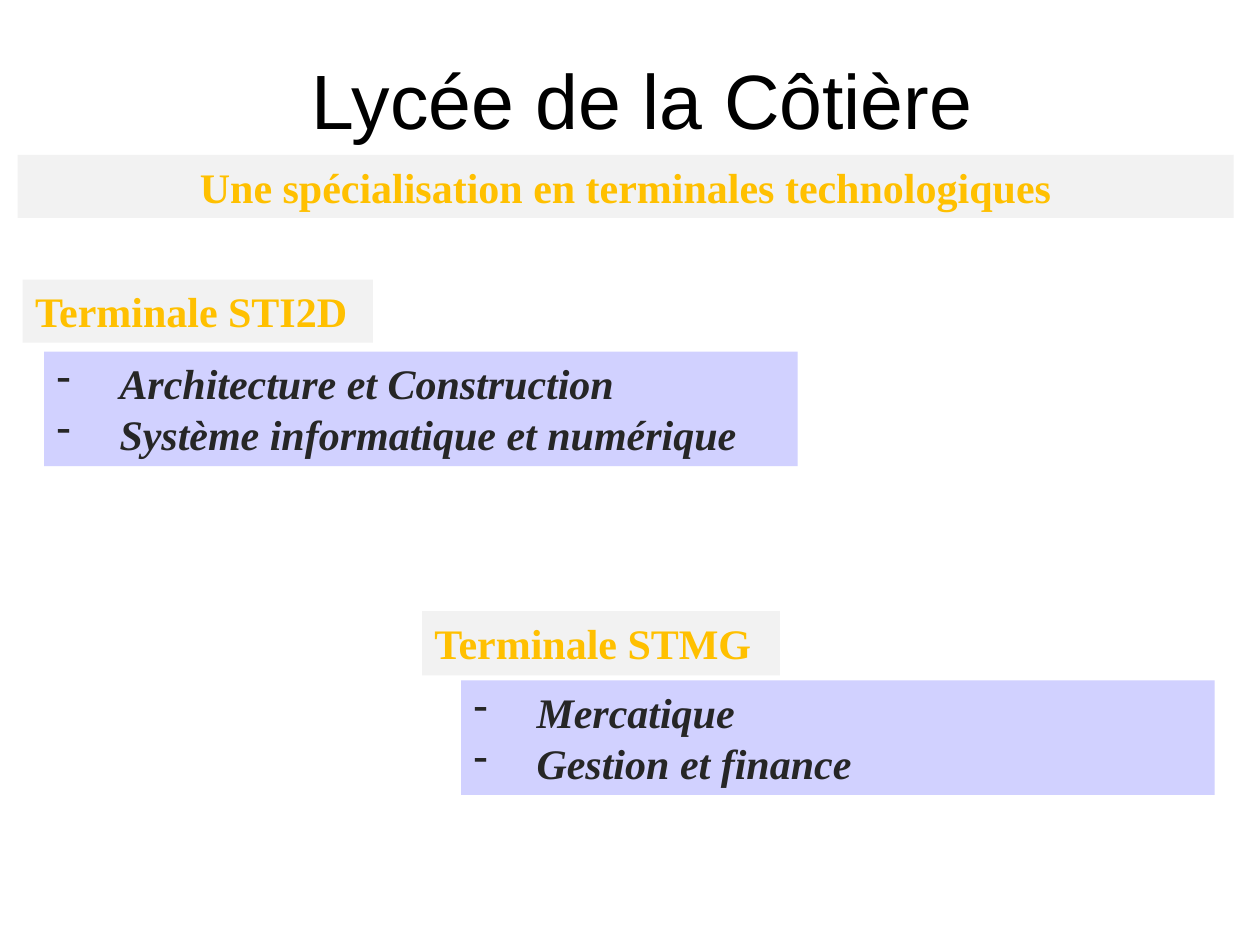
"""Build the slide on technological specialisations at the Lycée de la Côtière."""
from lxml.etree import SubElement
from pptx import Presentation
from pptx.dml.color import RGBColor
from pptx.enum.shapes import MSO_SHAPE as SHAPE
from pptx.enum.text import MSO_ANCHOR as ANCHOR, MSO_AUTO_SIZE as AUTO, PP_ALIGN as ALIGN
from pptx.oxml.ns import qn
from pptx.util import Inches, Pt

TITLE = "Lycée de la Côtière"
SUBTITLE = "Une spécialisation en terminales technologiques"
TRACKS = [
    {"name": "Terminale STI2D", "label": (0.18, 2.22, 2.78, 0.5), "list": (0.35, 2.79),
     "options": ["Architecture et Construction", "Système informatique et numérique"]},
    {"name": "Terminale STMG", "label": (3.35, 4.85, 2.84, 0.51), "list": (3.66, 5.4),
     "options": ["Mercatique", "Gestion et finance"]},
]
LIST_SIZE = (5.98, 0.91)
COLORS = {"title": "000000", "heading": "FFC000", "band": "F2F2F2",
          "option": "262626", "list": "CCCCFF"}


def add_run(p, text, size, font, color, bold=False, italic=False):
    r = p.add_run()
    r.text = text
    r.font.size, r.font.name = Pt(size), font
    r.font.bold, r.font.italic = bold, italic
    r.font.color.rgb = RGBColor.from_string(COLORS[color])


def add_box(s, box, fill):
    sp = s.shapes.add_shape(SHAPE.RECTANGLE, *map(Inches, box))
    sp.shadow.inherit = False
    sp.fill.solid()
    sp.fill.fore_color.rgb = RGBColor.from_string(COLORS[fill])
    sp.line.fill.background()
    tf = sp.text_frame
    tf.word_wrap, tf.auto_size = True, AUTO.SHAPE_TO_FIT_TEXT
    tf.vertical_anchor = ANCHOR.TOP
    return sp


def add_heading(s, box, text, align=ALIGN.LEFT):
    p = add_box(s, box, "band").text_frame.paragraphs[0]
    p.alignment = align
    add_run(p, text, 24, "Times New Roman", "heading", bold=True)


def add_options(s, box, options):
    sp = add_box(s, box, "list")
    color = sp.fill._xPr.find(qn("a:solidFill"))[0]
    SubElement(color, qn("a:alpha"), val="89000")
    tf = sp.text_frame
    for i, option in enumerate(options):
        p = tf.add_paragraph() if i else tf.paragraphs[0]
        p.alignment = ALIGN.LEFT
        pPr = p._p.get_or_add_pPr()
        pPr.set("marL", str(Inches(0.5)))
        pPr.set("indent", str(-Inches(0.5)))
        SubElement(pPr, qn("a:buFontTx"))
        SubElement(pPr, qn("a:buChar"), char="-")
        add_run(p, option, 24, "Times New Roman", "option", bold=True, italic=True)


def main():
    prs = Presentation()
    prs.slide_width, prs.slide_height = Inches(10), Inches(7.5)
    s = prs.slides.add_slide(prs.slide_layouts[5])

    title = s.shapes.title
    title.left, title.top, title.width, title.height = map(Inches, (1.56, 0.16, 7.08, 1.25))
    title.text_frame.vertical_anchor = ANCHOR.MIDDLE
    p = title.text_frame.paragraphs[0]
    p.alignment = ALIGN.CENTER
    add_run(p, TITLE, 44, "Arial", "title")

    add_heading(s, (0.14, 1.23, 9.65, 0.5), SUBTITLE, ALIGN.CENTER)
    for track in TRACKS:
        add_heading(s, track["label"], track["name"])
        add_options(s, track["list"] + LIST_SIZE, track["options"])
    prs.save("out.pptx")


if __name__ == "__main__":
    main()
